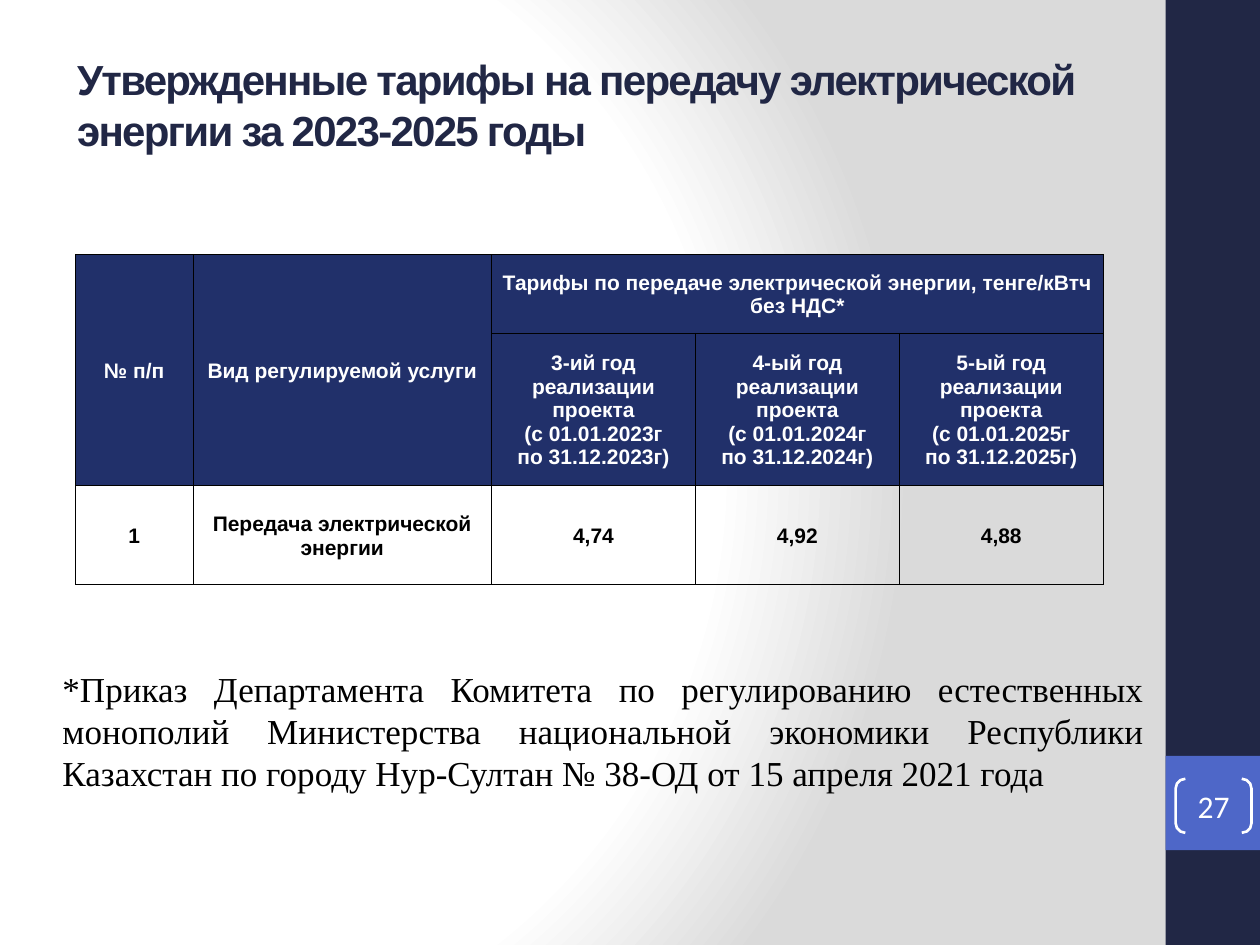
from lxml import etree
from pptx import Presentation
from pptx.dml.color import RGBColor
from pptx.enum.shapes import MSO_SHAPE
from pptx.enum.text import MSO_ANCHOR, PP_ALIGN
from pptx.oxml import parse_xml
from pptx.oxml.ns import nsdecls, qn
from pptx.util import Cm, Pt

COLORS = {
    "navy": "212745", "blue": "4E67C8", "header": "21306A",
    "white": "FFFFFF", "gray": "DADADA", "black": "000000",
}
TITLE = "Утвержденные тарифы на передачу электрической энергии за 2023-2025 годы"
NOTE = ("*Приказ Департамента Комитета по регулированию естественных монополий "
        "Министерства национальной экономики Республики Казахстан по городу "
        "Нур-Султан № 38-ОД от 15 апреля 2021 года")
TARIFFS = [("3-ий", 2023, "4,74"), ("4-ый", 2024, "4,92"), ("5-ый", 2025, "4,88")]
COL_WIDTHS = [2.37, 6.02, 4.11, 4.11, 4.11]
ROW_HEIGHTS = [1.59, 3.07, 2.0]


def rgb(name):
    return RGBColor.from_string(COLORS[name])


def format_text(tf, size, font, color, bold=False, align=None):
    for p in tf.paragraphs:
        p.alignment = align
        for r in p.runs:
            r.font.size, r.font.name, r.font.bold = Pt(size), font, bold
            r.font.color.rgb = rgb(color)


def set_background(s):
    """Radial gradient from white to gray."""
    fill = s.background.fill
    fill.gradient()
    grad = s._element.find(".//" + qn("a:gradFill"))
    stops = "".join(
        f'<a:gs pos="{pos * 1000}"><a:srgbClr val="{COLORS[c]}"/></a:gs>'
        for pos, c in [(0, "white"), (75, "white"), (100, "gray")])
    grad.getparent().replace(grad, parse_xml(
        f'<a:gradFill {nsdecls("a")} rotWithShape="1"><a:gsLst>{stops}</a:gsLst>'
        '<a:path path="circle"><a:fillToRect l="20000" t="50000" r="100000" b="50000"/>'
        '</a:path></a:gradFill>'))


def add_block(s, kind, color, *box):
    sp = s.shapes.add_shape(kind, *map(Cm, box))
    sp.shadow.inherit = False
    sp.fill.solid()
    sp.fill.fore_color.rgb = rgb(color)
    sp.line.fill.background()
    return sp


def add_sidebar(s, left, top, width, height, number):
    """Dark side strip with the bracketed page number."""
    add_block(s, MSO_SHAPE.RECTANGLE, "navy", left, top, width, height)
    add_block(s, MSO_SHAPE.RECTANGLE, "blue", left, top + 15.24, width, width)
    sp = add_block(s, MSO_SHAPE.DOUBLE_BRACKET, "blue", left + 0.2, top + 15.7, 1.53, 1.09)
    sp.fill.background()
    sp.line.color.rgb = rgb("white")
    sp.line.width = Pt(1.5)
    sp.adjustments[0] = 0.18
    tf = sp.text_frame
    tf.margin_left = tf.margin_right = tf.margin_top = tf.margin_bottom = 0
    tf.vertical_anchor = MSO_ANCHOR.MIDDLE
    tf.text = number
    format_text(tf, 18, "Calibri", "white", align=PP_ALIGN.CENTER)


def place_title(s, left, top, width, height):
    sp = s.shapes.title
    sp.left, sp.top, sp.width, sp.height = map(Cm, (left, top, width, height))
    tf = sp.text_frame
    tf.text = TITLE
    tf.word_wrap = True
    tf.vertical_anchor = MSO_ANCHOR.MIDDLE
    format_text(tf, 24, "Arial", "navy", bold=True, align=PP_ALIGN.LEFT)
    tf.paragraphs[0].runs[0].font._element.set("spc", "-100")


def add_borders(cell):
    tc_pr = cell._tc.get_or_add_tcPr()
    for i, side in enumerate(("lnL", "lnR", "lnT", "lnB")):
        ln = etree.Element(qn(f"a:{side}"), w=str(Pt(0.5)))
        fill = etree.SubElement(ln, qn("a:solidFill"))
        etree.SubElement(fill, qn("a:srgbClr"), val=COLORS["black"])
        tc_pr.insert(i, ln)


def format_cell(cell, is_header):
    if is_header:
        cell.fill.solid()
        cell.fill.fore_color.rgb = rgb("header")
    else:
        cell.fill.background()
    cell.margin_left = cell.margin_right = cell.margin_top = Cm(0.03)
    cell.margin_bottom = 0
    cell.vertical_anchor = MSO_ANCHOR.MIDDLE
    format_text(cell.text_frame, 12, "Arial", "white" if is_header else "black",
                bold=True, align=PP_ALIGN.CENTER)
    add_borders(cell)


def add_tariff_table(s, left, top):
    rows = [
        ["№ п/п", "Вид регулируемой услуги",
         "Тарифы по передаче электрической энергии, тенге/кВтч без НДС*", "", ""],
        ["", ""] + [f"{nth} год\vреализации\vпроекта\v(с 01.01.{year}г\vпо 31.12.{year}г)"
                    for nth, year, _ in TARIFFS],
        ["1", "Передача электрической энергии"] + [value for _, _, value in TARIFFS],
    ]
    table = s.shapes.add_table(len(rows), len(COL_WIDTHS), Cm(left), Cm(top),
                               Cm(sum(COL_WIDTHS)), Cm(sum(ROW_HEIGHTS))).table
    table.first_row = table.horz_banding = False
    for col, width in zip(table.columns, COL_WIDTHS):
        col.width = Cm(width)
    for row, height in zip(table.rows, ROW_HEIGHTS):
        row.height = Cm(height)
    for i, texts in enumerate(rows):
        for j, text in enumerate(texts):
            cell = table.cell(i, j)
            cell.text = text
            format_cell(cell, is_header=i < 2)
    for start, end in [((0, 0), (1, 0)), ((0, 1), (1, 1)), ((0, 2), (0, 4))]:
        table.cell(*start).merge(table.cell(*end))


def add_footnote(s, left, top, width, height):
    tf = s.shapes.add_textbox(*map(Cm, (left, top, width, height))).text_frame
    tf.word_wrap = True
    tf.text = NOTE
    format_text(tf, 20, "Times New Roman", "black", align=PP_ALIGN.JUSTIFY)
    p = tf.paragraphs[0]
    p.space_before = Pt(4)
    p._p.get_or_add_pPr().set("marL", str(Cm(0.3)))


def main():
    prs = Presentation()
    prs.slide_width, prs.slide_height = Cm(25.4), Cm(19.05)
    s = prs.slides.add_slide(prs.slide_layouts[5])
    set_background(s)
    add_sidebar(s, 23.5, 0, 1.9, 19.05, "27")
    place_title(s, 1.3, 1.12, 21.2, 1.96)
    add_tariff_table(s, 1.52, 5.13)
    add_footnote(s, 0.71, 13.33, 22.6, 2.82)
    prs.save("out.pptx")


if __name__ == "__main__":
    main()
